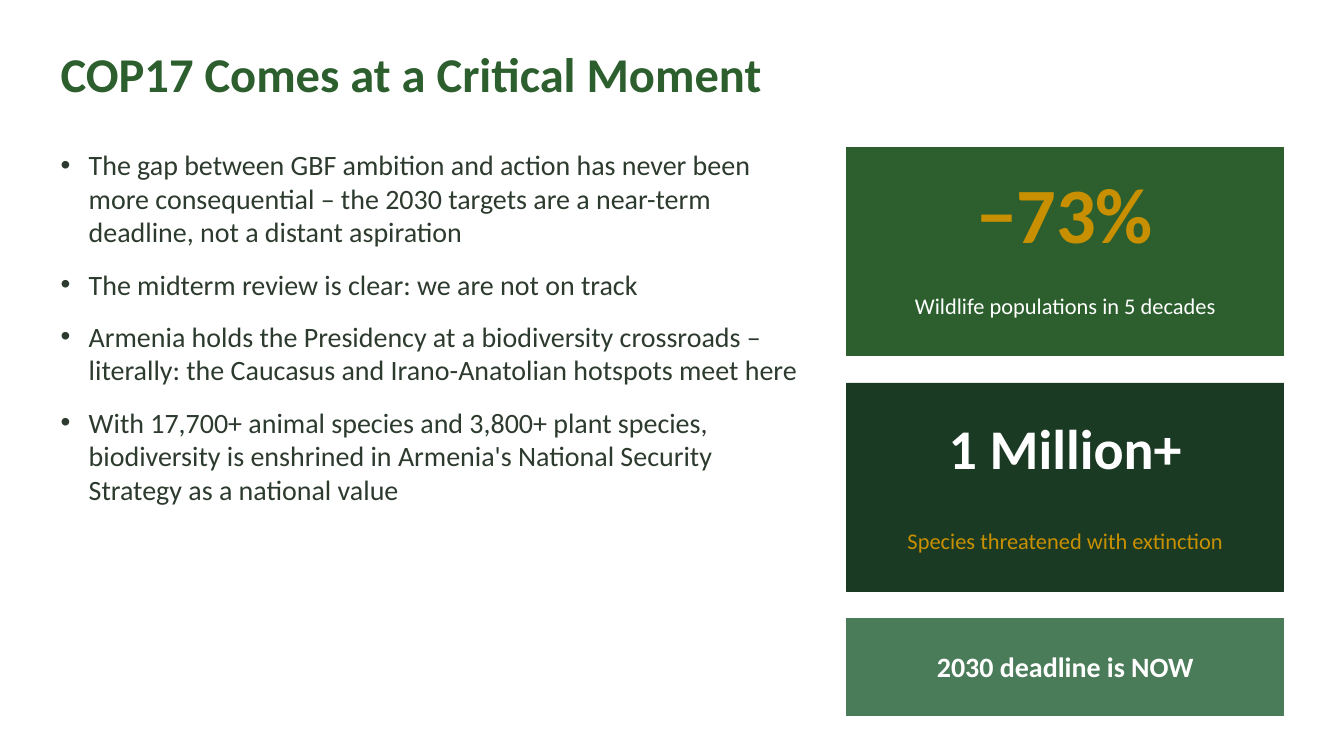
"""Build the COP17 slide with a bullet list and three stacked message cards."""

from typing import NamedTuple

from lxml.etree import SubElement
from pptx import Presentation
from pptx.dml.color import RGBColor
from pptx.enum.shapes import MSO_SHAPE as Preset
from pptx.enum.text import MSO_ANCHOR as Anchor, MSO_AUTO_SIZE as AutoSize, PP_ALIGN as Align
from pptx.oxml.ns import qn
from pptx.util import Cm, Pt

COLORS = {
    "green": "2C5F2D",
    "forest": "1A3A24",
    "sage": "4A7C59",
    "gold": "C89000",
    "white": "FFFFFF",
    "ink": "2D3B2E",
}
FRAME_FORMAT = {
    "margin_left": 0,
    "margin_right": 0,
    "margin_top": 0,
    "margin_bottom": 0,
    "word_wrap": True,
    "auto_size": AutoSize.NONE,
}
LEFT, CARD_LEFT = 3.05, 42.67
CONTENT_TOP = 7.44
CARD_WIDTH, CARD_PITCH = 22.02, 11.86
BULLET_INDENT = Cm(1.42)
BULLETS = (
    "The gap between GBF ambition and action has never been more consequential – "
    "the 2030 targets are a near-term deadline, not a distant aspiration",
    "The midterm review is clear: we are not on track",
    "Armenia holds the Presidency at a biodiversity crossroads – "
    "literally: the Caucasus and Irano-Anatolian hotspots meet here",
    "With 17,700+ animal species and 3,800+ plant species, biodiversity is enshrined "
    "in Armenia's National Security Strategy as a national value",
)


class Style(NamedTuple):
    """Describe the look of a text."""

    size: float
    color: str
    bold: bool = False
    align: Align = Align.LEFT
    anchor: Anchor = Anchor.MIDDLE
    after: float = 0


class Label(NamedTuple):
    """Describe one line of text, placed from the top of its card."""

    text: str
    offset: float
    height: float
    style: Style


class Card(NamedTuple):
    """Describe a filled card and its labels."""

    color: str
    height: float
    labels: tuple[Label, ...]


def centered(size: float, color: str, bold: bool = False) -> Style:
    """Return a centred style."""
    return Style(size, color, bold, Align.CENTER)


CARDS = (
    Card("green", 10.49, (
        Label("−73%", 0.36, 5.77, centered(112, "gold", True)),
        Label("Wildlife populations in 5 decades", 5.97, 3.94, centered(32, "white")),
    )),
    Card("forest", 10.49, (
        Label("1 Million+", 0.36, 5.77, centered(80, "white", True)),
        Label("Species threatened with extinction", 5.97, 3.94, centered(32, "gold")),
    )),
    Card("sage", 4.88, (
        Label("2030 deadline is NOW", 0.46, 3.94, centered(40, "white", True)),
    )),
)


def rgb(name: str) -> RGBColor:
    """Return a named colour."""
    return RGBColor.from_string(COLORS[name])


def set_attributes(target, values: dict) -> None:
    """Set every named value on the target."""
    for name, value in values.items():
        setattr(target, name, value)


def place(box, left: float, top: float, width: float, height: float) -> None:
    """Move and size a box, in centimetres."""
    set_attributes(box, {
        "left": Cm(left), "top": Cm(top), "width": Cm(width), "height": Cm(height),
    })


def add_bullet(para) -> None:
    """Give a paragraph a hanging bullet."""
    properties = para._p.get_or_add_pPr()
    properties.set("marL", str(BULLET_INDENT))
    properties.set("indent", str(-BULLET_INDENT))
    SubElement(properties, qn("a:buChar")).set("char", "•")


def write(box, texts: tuple[str, ...], style: Style, bulleted: bool = False) -> None:
    """Fill a box with one formatted paragraph per text."""
    frame = box.text_frame
    set_attributes(frame, {**FRAME_FORMAT, "vertical_anchor": style.anchor})
    for index, text in enumerate(texts):
        para = frame.add_paragraph() if index else frame.paragraphs[0]
        if bulleted:
            add_bullet(para)
        set_attributes(para, {
            "alignment": style.align, "space_before": Pt(0), "space_after": Pt(style.after),
        })
        span = para.add_run()
        span.text = text
        set_attributes(span.font, {
            "name": "Calibri", "size": Pt(style.size), "bold": style.bold,
        })
        span.font.color.rgb = rgb(style.color)


def draw_card(page, card: Card, top: float) -> None:
    """Draw a card with its labels."""
    panel = page.shapes.add_shape(
        Preset.RECTANGLE, Cm(CARD_LEFT), Cm(top), Cm(CARD_WIDTH), Cm(card.height)
    )
    panel.shadow.inherit = False
    panel.fill.solid()
    panel.fill.fore_color.rgb = rgb(card.color)
    panel.line.color.rgb = rgb(card.color)
    panel.line.width = Pt(1)
    for label in card.labels:
        box = page.shapes.add_textbox(
            Cm(CARD_LEFT), Cm(top + label.offset), Cm(CARD_WIDTH), Cm(label.height)
        )
        write(box, (label.text,), label.style)


def main() -> None:
    """Build and save the deck."""
    deck = Presentation()
    set_attributes(deck, {"slide_width": Cm(67.72), "slide_height": Cm(38.1)})
    page = deck.slides.add_slide(deck.slide_layouts[1])
    page.background.fill.solid()
    page.background.fill.fore_color.rgb = rgb("white")

    title, body = page.placeholders
    place(title, LEFT, 1.22, 61.65, 4.88)
    write(title, ("COP17 Comes at a Critical Moment",), Style(69.3, "green", True))
    place(body, LEFT, CONTENT_TOP, 37.26, 19.13)
    write(body, BULLETS, Style(40, "ink", anchor=Anchor.TOP, after=26.7), bulleted=True)

    for index, card in enumerate(CARDS):
        draw_card(page, card, CONTENT_TOP + index * CARD_PITCH)
    deck.save("out.pptx")


if __name__ == "__main__":
    main()
